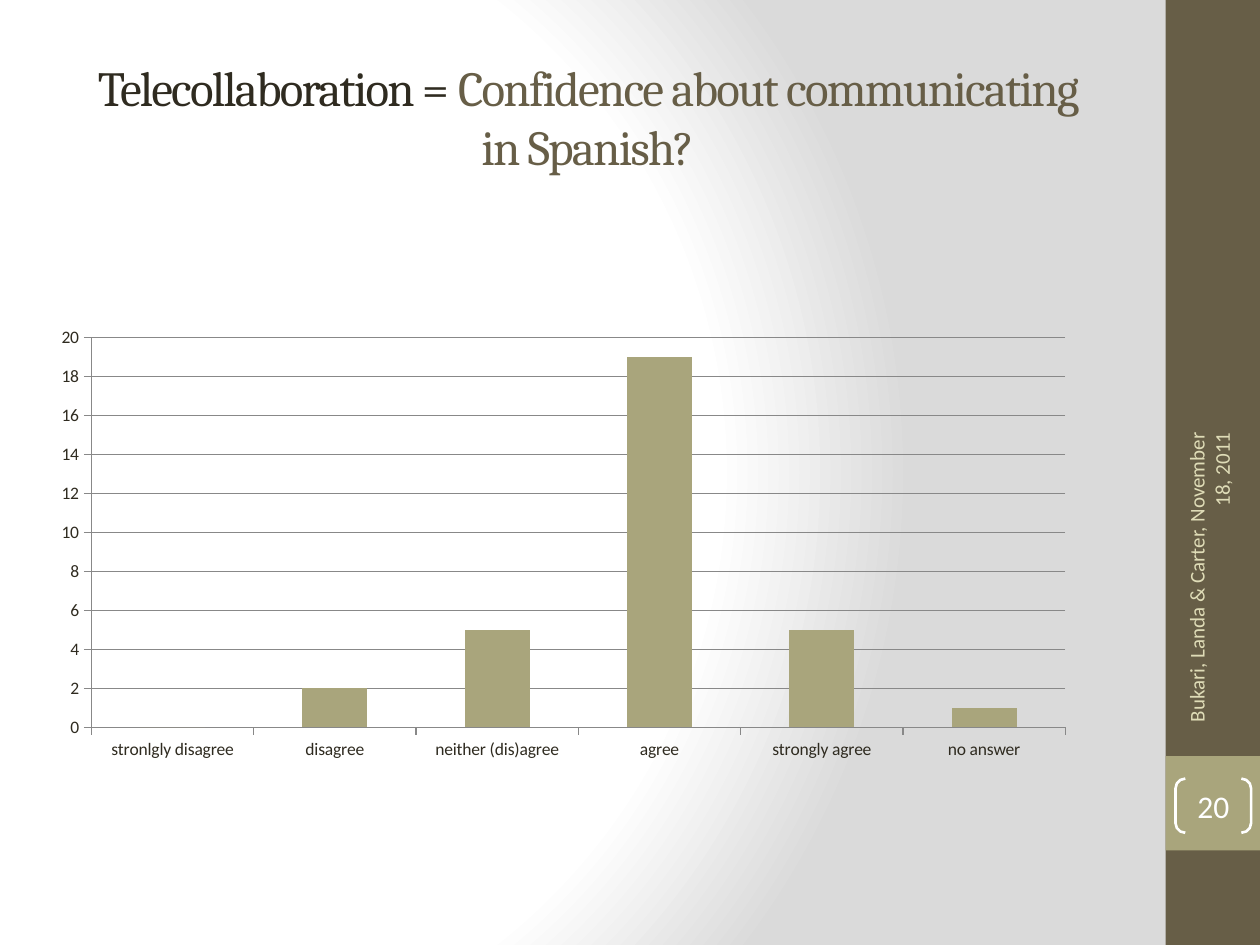
from lxml.etree import SubElement
from pptx import Presentation
from pptx.chart.data import CategoryChartData
from pptx.dml.color import RGBColor
from pptx.enum.chart import XL_CHART_TYPE, XL_TICK_MARK
from pptx.enum.shapes import MSO_SHAPE
from pptx.enum.text import MSO_ANCHOR, PP_ALIGN
from pptx.oxml import parse_xml
from pptx.oxml.ns import nsdecls, qn
from pptx.util import Inches, Pt

COLORS = {
    name: RGBColor.from_string(value)
    for name, value in {
        "dark": "2F2B20", "brown": "675E47", "olive": "A9A57C", "cream": "DFDCB7",
        "white": "FFFFFF", "grid": "888888",
    }.items()
}

presentation = Presentation()
presentation.slide_width, presentation.slide_height = Inches(10), Inches(7.5)
slide = presentation.slides.add_slide(presentation.slide_layouts[5])
shapes = slide.shapes
band = Inches(0.75)  # width of the side band and side of the number square
band_left = presentation.slide_width - band


def style_text(shape, size, color, alignment, font_name="Calibri"):
    frame = shape.text_frame
    frame.word_wrap = True
    frame.vertical_anchor = MSO_ANCHOR.MIDDLE
    paragraph = frame.paragraphs[0]
    paragraph.alignment = alignment
    paragraph.font.name, paragraph.font.size = font_name, Pt(size)
    paragraph.font.color.rgb = COLORS[color]
    return paragraph


# Background: radial gradient
slide.background.fill.solid()
background = slide.background.fill._xPr
background.replace(background[0], parse_xml(
    f'<a:gradFill {nsdecls("a")} rotWithShape="1"><a:gsLst>'
    + "".join(
        f'<a:gs pos="{share * 1000}"><a:srgbClr val="{color}"/></a:gs>'
        for share, color in ((0, "FFFFFF"), (75, "FFFFFF"), (100, "DADADA"))
    )
    + '</a:gsLst><a:path path="circle">'
    '<a:fillToRect l="20000" t="50000" r="100000" b="50000"/></a:path></a:gradFill>'
))

# Side band and number square
for top, height, color in ((0, presentation.slide_height, "brown"), (band * 8, band, "olive")):
    panel = shapes.add_shape(MSO_SHAPE.RECTANGLE, band_left, top, band, height)
    panel.shadow.inherit = False
    panel.fill.solid()
    panel.fill.fore_color.rgb = COLORS[color]
    panel.line.fill.background()

# Title
title = shapes.title
title.left, title.top = Inches(0.5), Inches(0.3)
title.width, title.height = Inches(8.33), Inches(1.25)
paragraph = style_text(title, 28, "dark", PP_ALIGN.CENTER, "Cambria")
for text, color in (
    ("Telecollaboration = ", "dark"),
    ("Confidence about communicating in Spanish?", "brown"),
):
    run = paragraph.add_run()
    run.text = text
    run.font.color.rgb = COLORS[color]
    run.font._element.set("spc", "-100")

# Footer running up the band
footer = shapes.add_textbox(Inches(8.3), Inches(4.43), Inches(2.59), Inches(0.4))
footer.rotation = 270
footer.text_frame.text = "Bukari, Landa & Carter, November 18, 2011"
style_text(footer, 12, "cream", PP_ALIGN.RIGHT)

# Slide number in brackets
number = shapes.add_shape(
    MSO_SHAPE.DOUBLE_BRACKET, Inches(9.33), Inches(6.18), Inches(0.6), Inches(0.43)
)
number.adjustments[0] = 0.18
number.shadow.inherit = False
number.fill.background()
number.line.color.rgb = COLORS["white"]
number.line.width = Pt(1.5)
frame = number.text_frame
frame.margin_left = frame.margin_top = frame.margin_right = frame.margin_bottom = 0
frame.text = "20"
style_text(number, 18, "white", PP_ALIGN.CENTER)

# Column chart of the answers
answers = {
    "stronlgly disagree": 0, "disagree": 2, "neither (dis)agree": 5,
    "agree": 19, "strongly agree": 5, "no answer": 1,
}
chart_data = CategoryChartData()
chart_data.categories = list(answers)
chart_data.add_series("Series 1", list(answers.values()))
chart = shapes.add_chart(
    XL_CHART_TYPE.COLUMN_CLUSTERED,
    Inches(0.35), Inches(1.39), Inches(8.33), Inches(5.01), chart_data,
).chart
chart.has_legend = chart.has_title = False
chart.font.name, chart.font.size = "Calibri", Pt(10)
chart.font.color.rgb = COLORS["dark"]
plot = chart.plots[0]
plot.gap_width = 150
plot.vary_by_categories = False
columns = plot.series[0].format.fill
columns.solid()
columns.fore_color.rgb = COLORS["olive"]

value_axis = chart.value_axis
value_axis.minimum_scale, value_axis.maximum_scale, value_axis.major_unit = 0, 20, 2
value_axis.has_major_gridlines = True
for axis in (chart.category_axis, value_axis):
    axis.major_tick_mark = XL_TICK_MARK.OUTSIDE
for line in (
    chart.category_axis.format.line, value_axis.format.line,
    value_axis.major_gridlines.format.line,
):
    line.color.rgb = COLORS["grid"]
    line.width = Pt(0.75)

# Fixed inner plot area, as shares of the chart
plot_area = chart._chartSpace.chart.plotArea
for old_layout in plot_area.findall(qn("c:layout")):
    plot_area.remove(old_layout)
layout = parse_xml(f'<c:layout {nsdecls("c")}><c:manualLayout/></c:layout>')
for tag, value in (
    ("layoutTarget", "inner"), ("xMode", "edge"), ("yMode", "edge"),
    ("x", "0.045"), ("y", "0.257"), ("w", "0.928"), ("h", "0.618"),
):
    SubElement(layout[0], qn(f"c:{tag}")).set("val", value)
plot_area.insert(0, layout)

presentation.save("out.pptx")
